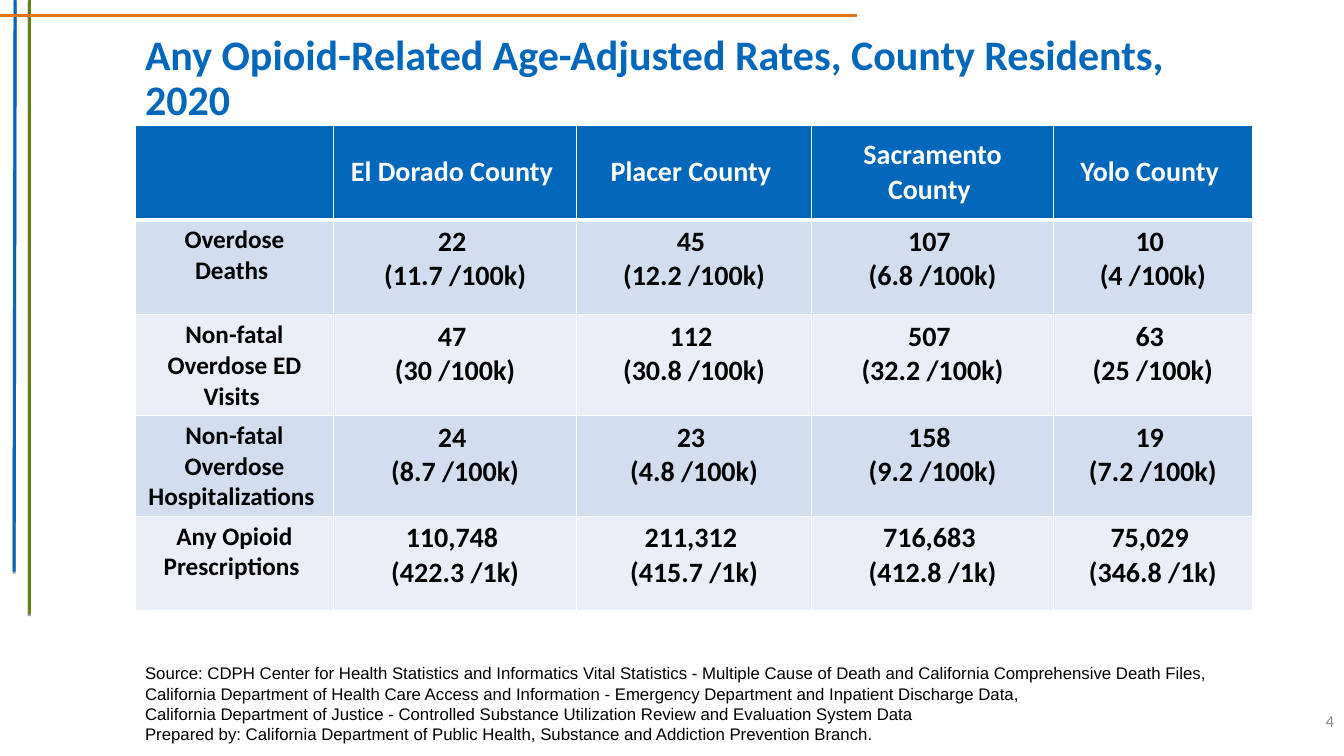
from lxml import etree
from pptx import Presentation
from pptx.dml.color import RGBColor
from pptx.enum.shapes import MSO_CONNECTOR
from pptx.enum.text import MSO_ANCHOR, PP_ALIGN
from pptx.oxml import parse_xml
from pptx.oxml.ns import nsdecls, qn
from pptx.util import Inches, Pt

COLORS = {
    "blue": "0067BB",
    "green": "658313",
    "orange": "E47313",
    "band_dark": "D2DEEF",
    "band_light": "EAEFF7",
    "white": "FFFFFF",
    "black": "000000",
    "gray": "8C8C8C",
}


def style_paragraph(p, size, color, bold=False, align=PP_ALIGN.LEFT, font="Calibri"):
    p.alignment = align
    p.font.name = font
    p.font.size = Pt(size)
    p.font.bold = bold
    p.font.color.rgb = RGBColor.from_string(COLORS[color])


def add_text(left, top, width, height, lines, anchor, **style):
    """Add a wrapping text box with one uniformly styled paragraph per line."""
    box = slide.shapes.add_textbox(Inches(left), Inches(top), Inches(width), Inches(height))
    tf = box.text_frame
    tf.word_wrap = True
    tf.vertical_anchor = anchor
    tf.text = "\n".join(lines)
    for p in tf.paragraphs:
        style_paragraph(p, **style)
    return tf


prs = Presentation()
prs.slide_width = Inches(13.33)
prs.slide_height = Inches(7.5)
slide = prs.slides.add_slide(prs.slide_layouts[6])

# Corner rules
rules = [
    (0.15, 0, 0.14, 5.67, "blue", True),
    (0.29, 0, 0.29, 6.09, "green", True),
    (0, 0.15, 8.5, 0.15, "orange", False),
]
for x1, y1, x2, y2, color, shadowed in rules:
    line = slide.shapes.add_connector(
        MSO_CONNECTOR.STRAIGHT, Inches(x1), Inches(y1), Inches(x2), Inches(y2))
    line.line.color.rgb = RGBColor.from_string(COLORS[color])
    line.line.width = Pt(2.25)
    effects = etree.SubElement(line._element.spPr, qn("a:effectLst"))
    if shadowed:
        effects.append(parse_xml(
            f'<a:outerShdw {nsdecls("a")} dist="{Pt(1.6)}" dir="5400000" rotWithShape="0">'
            f'<a:srgbClr val="{COLORS["black"]}"><a:alpha val="38000"/></a:srgbClr>'
            '</a:outerShdw>'))

# Title and slide number
title = add_text(1.34, 0.4, 11.08, 0.77,
                 ["Any Opioid-Related Age-Adjusted Rates, County Residents, 2020"],
                 MSO_ANCHOR.MIDDLE, size=30, color="blue", bold=True)
title.paragraphs[0].line_spacing = 0.9
add_text(10.33, 6.95, 3, 0.4, ["4"], MSO_ANCHOR.MIDDLE,
         size=12, color="gray", align=PP_ALIGN.RIGHT)

# County table
rows = [
    ["", "El Dorado County ", "Placer County ", "Sacramento County ", "Yolo County "],
    ["Overdose Deaths ", "22 \n(11.7 /100k)", "45 \n(12.2 /100k)",
     "107 \n(6.8 /100k)", "10 \n(4 /100k)"],
    ["Non-fatal Overdose ED Visits ", "47 \n(30 /100k)", "112 \n(30.8 /100k)",
     "507 \n(32.2 /100k)", "63 \n(25 /100k)"],
    ["Non-fatal Overdose Hospitalizations ", "24 \n(8.7 /100k)", "23 \n(4.8 /100k)",
     "158 \n(9.2 /100k)", "19 \n(7.2 /100k)"],
    ["Any Opioid Prescriptions ", "110,748 \n(422.3 /1k)", "211,312 \n(415.7 /1k)",
     "716,683 \n(412.8 /1k)", "75,029 \n(346.8 /1k)"],
]
col_widths = [1.97, 2.41, 2.33, 2.4, 1.97]
table = slide.shapes.add_table(len(rows), len(col_widths), Inches(1.34), Inches(1.24),
                               Inches(11.08), Inches(4.7)).table
for column, width in zip(table.columns, col_widths):
    column.width = Inches(width)
for r, texts in enumerate(rows):
    table.rows[r].height = Inches(0.94)
    header = r == 0
    fill = "blue" if header else "band_dark" if r % 2 else "band_light"
    for c, text in enumerate(texts):
        cell = table.cell(r, c)
        widths = {"lnL": 1, "lnR": 1,
                  "lnT": 3 if r == 1 else 1, "lnB": 3 if header else 1}
        for side, width in widths.items():
            cell._tc.get_or_add_tcPr().append(parse_xml(
                f'<a:{side} {nsdecls("a")} w="{Pt(width)}"><a:solidFill>'
                f'<a:srgbClr val="{COLORS["white"]}"/></a:solidFill></a:{side}>'))
        cell.fill.solid()
        cell.fill.fore_color.rgb = RGBColor.from_string(COLORS[fill])
        cell.vertical_anchor = MSO_ANCHOR.MIDDLE if header else MSO_ANCHOR.TOP
        cell.text = text
        for p in cell.text_frame.paragraphs:
            style_paragraph(p, 18 if c == 0 else 20, "white" if header else "black",
                            bold=True, align=PP_ALIGN.CENTER)

# Sources
add_text(1.34, 6.53, 11.08, 0.91, [
    "Source: CDPH Center for Health Statistics and Informatics Vital Statistics - Multiple "
    "Cause of Death and California Comprehensive Death Files, California Department of Health "
    "Care Access and Information - Emergency Department and Inpatient Discharge Data,",
    "California Department of Justice - Controlled Substance Utilization Review and "
    "Evaluation System Data",
    "Prepared by: California Department of Public Health, Substance and Addiction "
    "Prevention Branch.",
], MSO_ANCHOR.TOP, size=12, color="black", font="Arial")

prs.save("out.pptx")
